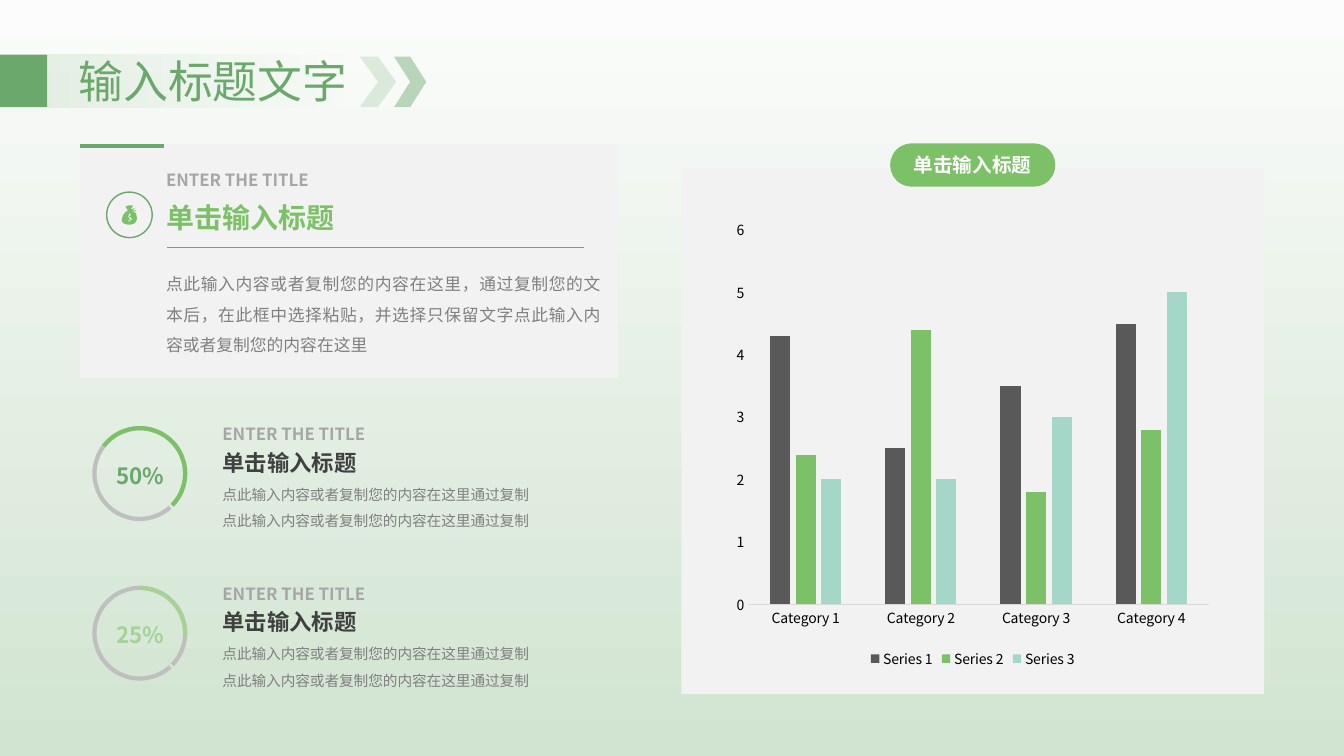
import dataclasses
import lxml.etree
import pptx
import pptx.chart.data
import pptx.dml.color
import pptx.enum.chart
import pptx.enum.shapes
import pptx.enum.text
import pptx.oxml.ns
import pptx.util

Pt = pptx.util.Pt
qn = pptx.oxml.ns.qn
FORM = pptx.enum.shapes.MSO_SHAPE
ALIGN = pptx.enum.text.PP_ALIGN
MID = pptx.enum.text.MSO_ANCHOR.MIDDLE


@dataclasses.dataclass(frozen=True)
class Theme:
    font: str = "Noto Sans CJK SC"
    green: str = "6AA86B"
    lime: str = "7CC167"
    pale: str = "A4D395"
    mint: str = "A4D7C8"
    white: str = "FFFFFF"
    panel: str = "F2F2F2"
    rule: str = "D9D9D9"
    track: str = "BFBFBF"
    label: str = "A6A6A6"
    body: str = "808080"
    slate: str = "595959"
    dark: str = "404040"
    black: str = "000000"
    sky: str = "FBFCFB"
    ground: str = "D1E4D1"
    title: float = 32
    lead: float = 20
    head: float = 16
    tag: float = 14
    text: float = 12
    note: float = 10.5
    tick: float = 10


T = Theme()


def rgb(code):
    return pptx.dml.color.RGBColor.from_string(code)


def fade(color, share):
    """Set the opacity of a colour element, in percent."""
    lxml.etree.SubElement(color, qn("a:alpha")).set("val", str(share * 1000))


def shape(slide, form, box, fill=None, line=None, width=1):
    item = slide.shapes.add_shape(form, *map(Pt, box))
    paint(item, fill)
    if line:
        item.line.color.rgb = rgb(line)
        item.line.width = Pt(width)
    return item


def paint(item, fill):
    item.shadow.inherit = False
    item.line.fill.background()
    if fill:
        item.fill.solid()
        item.fill.fore_color.rgb = rgb(fill)
    else:
        item.fill.background()


def line(slide, start, end, width):
    item = slide.shapes.add_connector(
        pptx.enum.shapes.MSO_CONNECTOR.STRAIGHT, *map(Pt, start + end))
    item.line.color.rgb = rgb(T.green)
    item.line.width = Pt(width)
    lxml.etree.SubElement(item._element.spPr, qn("a:effectLst"))


def write(frame, words, size, color, bold=False, align=ALIGN.JUSTIFY, space=1.2):
    frame.text = words
    for para in frame.paragraphs:
        para.alignment = align
        para.line_spacing = space
        for run in para.runs:
            run.font.size = Pt(size)
            run.font.bold = bold
            run.font.color.rgb = rgb(color)
            run.font.name = T.font
            east = lxml.etree.SubElement(run.font._element, qn("a:ea"))
            east.set("typeface", T.font)


def label(slide, box, words, size, color, **style):
    frame = slide.shapes.add_textbox(*map(Pt, box)).text_frame
    frame.word_wrap = True
    frame.auto_size = pptx.enum.text.MSO_AUTO_SIZE.SHAPE_TO_FIT_TEXT
    write(frame, words, size, color, **style)
    return frame


def backdrop(slide):
    fill = slide.background.fill
    fill.gradient()
    fill.gradient_angle = 270
    for stop, color in zip(fill.gradient_stops, (T.sky, T.ground)):
        stop.color.rgb = rgb(color)


def header(slide, box):
    x, y, w, h = box
    # Fading band behind the title
    band = shape(slide, FORM.RECTANGLE, (x + 33.8, y, 219.6, h))
    band.fill.gradient()
    band.fill.gradient_angle = 0
    for stop, share in zip(band.fill.gradient_stops, (14, 0)):
        stop.color.rgb = rgb(T.green)
        fade(stop._gs[0], share)
    label(slide, (x + 49, y - 4.3, 248.4, 46), "输入标题文字", T.title, T.green,
          align=ALIGN.LEFT, space=1)
    shape(slide, FORM.RECTANGLE, (x, y, 33.8, h), T.green)
    # Chevrons at the right end
    for left, width, share in ((257, 26, 20), (281.5, 23, 44)):
        mark = shape(slide, FORM.CHEVRON, (x + left, y + 1.5, width, 36), T.green)
        fade(mark._element.spPr.find(qn("a:solidFill"))[0], share)


def bag(slide, x, y):
    # Bag outline and coin sign, in hundredths of an inch
    sack = [(14, 9), (10, 6), (13.5, 6.6), (13.5, 5.8), (10.5, 5.7), (13, 4.2),
            (12.5, 3.8), (9.3, 5.3), (11, 1.2), (10, .6), (8, 1), (6, .7),
            (4, 1.5), (4, 3), (6, 6), (3, 8), (1, 11), (0, 14.5), (.5, 17),
            (2.5, 19), (5, 20), (9, 20), (12, 19), (14.5, 17), (15, 14), (14, 9)]
    sign = [(8, 16.3), (8, 17.3), (7.2, 17.3), (7.2, 16.4), (5.7, 16), (5.9, 15),
            (7.5, 15.5), (8.5, 14.8), (7, 13.3), (5.8, 12), (7.2, 10.3),
            (7.2, 9.3), (8, 9.3), (8, 10.2), (9.3, 10.5), (9, 11.4),
            (7.5, 11.2), (7.2, 12), (9, 13.3), (9.8, 14.8), (8, 16.3)]
    pen = slide.shapes.build_freeform(*sack[0], scale=Pt(0.72))
    pen.add_line_segments(sack[1:], close=True)
    pen.move_to(*sign[0])
    pen.add_line_segments(sign[1:], close=True)
    paint(pen.convert_to_shape(Pt(x), Pt(y)), T.lime)


def card(slide, box):
    x, y, w, h = box
    shape(slide, FORM.RECTANGLE, box, T.panel)
    line(slide, (x, y + 1.5), (x + 60, y + 1.5), 3)
    # Text column
    left = x + 54.5
    label(slide, (left, y + 82, 325, 72.7),
          "点此输入内容或者复制您的内容在这里，通过复制您的文本后，"
          "在此框中选择粘贴，并选择只保留文字点此输入内容或者复制您的内容在这里",
          T.text, T.body, space=1.5)
    label(slide, (left, y + 31.7, 192, 34), "单击输入标题", T.lead, T.lime, bold=True)
    line(slide, (x + 62.5, y + 73.8), (x + 360.5, y + 73.8), 0.5)
    label(slide, (left, y + 12, 192, 23), "ENTER THE TITLE", T.text, T.label, bold=True)
    # Icon
    shape(slide, FORM.OVAL, (x + 19.2, y + 34.2, 32.5, 32.5), line=T.green)
    bag(slide, x + 30.1, y + 43)


def item(slide, box, share, tone, color, start, end):
    x, y, w, h = box
    # Ring: grey track below, share above; angles in degrees
    for first, last, ink in ((47.84, 44.32, T.track), (start, end, color)):
        arc = shape(slide, FORM.ARC, (x, y + 9.3, 64.8, 64.8), line=ink, width=3)
        arc.adjustments[0] = first * 0.6
        arc.adjustments[1] = last * 0.6
    frame = label(slide, (x + 2.2, y + 26.6, 61.2, 28.8), share, T.head, tone,
                  bold=True, align=ALIGN.CENTER)
    frame.vertical_anchor = MID
    # Text column
    left = x + 84.3
    label(slide, (left, y + 16.7, 167, 28.8), "单击输入标题", T.head, T.dark, bold=True)
    label(slide, (left, y, 167, 23), "ENTER THE TITLE", T.text, T.label, bold=True)
    label(slide, (left, y + 40.5, w - 84.3, 43.2),
          "\n".join(["点此输入内容或者复制您的内容在这里通过复制"] * 2),
          T.note, T.body, space=1.5)


def panel(slide, box):
    x, y, w, h = box
    shape(slide, FORM.ROUNDED_RECTANGLE, box, T.panel).adjustments[0] = 0
    # Chart
    data = pptx.chart.data.CategoryChartData()
    data.categories = [f"Category {n}" for n in range(1, 5)]
    rows = (4.3, 2.5, 3.5, 4.5), (2.4, 4.4, 1.8, 2.8), (2, 2, 3, 5)
    for n, row in enumerate(rows, 1):
        data.add_series(f"Series {n}", row)
    kind = pptx.enum.chart.XL_CHART_TYPE.COLUMN_CLUSTERED
    chart = slide.shapes.add_chart(
        kind, *map(Pt, (x + 32.4, y + 31, 351.4, 329.8)), data).chart
    chart.has_title = False
    chart.font.name = T.font
    chart.font.size = Pt(T.tick)
    chart.font.color.rgb = rgb(T.black)
    plot = chart.plots[0]
    plot.vary_by_categories = False
    plot.gap_width = 219
    plot.overlap = -27
    for series, color in zip(plot.series, (T.slate, T.lime, T.mint)):
        series.format.fill.solid()
        series.format.fill.fore_color.rgb = rgb(color)
    for axis in (chart.category_axis, chart.value_axis):
        axis.has_major_gridlines = False
        axis.major_tick_mark = pptx.enum.chart.XL_TICK_MARK.NONE
    chart.category_axis.format.line.color.rgb = rgb(T.rule)
    chart.category_axis.format.line.width = Pt(0.75)
    scale = chart.value_axis
    scale.format.line.fill.background()
    scale.minimum_scale, scale.maximum_scale, scale.major_unit = 0, 6, 1
    chart.has_legend = True
    chart.legend.position = pptx.enum.chart.XL_LEGEND_POSITION.BOTTOM
    chart.legend.include_in_layout = False
    # Heading pill, centred on the top edge
    pill = shape(slide, FORM.ROUNDED_RECTANGLE,
                 (x + w / 2 - 59, y - 17.3, 118, 31), T.lime)
    pill.adjustments[0] = 0.5
    pill.text_frame.vertical_anchor = MID
    write(pill.text_frame, "单击输入标题", T.tag, T.white, bold=True,
          align=ALIGN.CENTER, space=1)


def main():
    deck = pptx.Presentation()
    deck.slide_width, deck.slide_height = Pt(960), Pt(540)
    slide = deck.slides.add_slide(deck.slide_layouts[6])
    backdrop(slide)
    panel(slide, (486.7, 119.7, 416.2, 376))
    rings = (("50%", T.green, T.lime, 217.33, 44.32),
             ("25%", T.pale, T.pale, 270.82, 2.83))
    for n, ring in enumerate(rings):
        item(slide, (67.5, 296.6 + 114 * n, 400, 84), *ring)
    card(slide, (57, 103, 384.5, 167))
    header(slide, (0, 39, 305, 37.5))
    deck.save("out.pptx")


if __name__ == "__main__":
    main()
